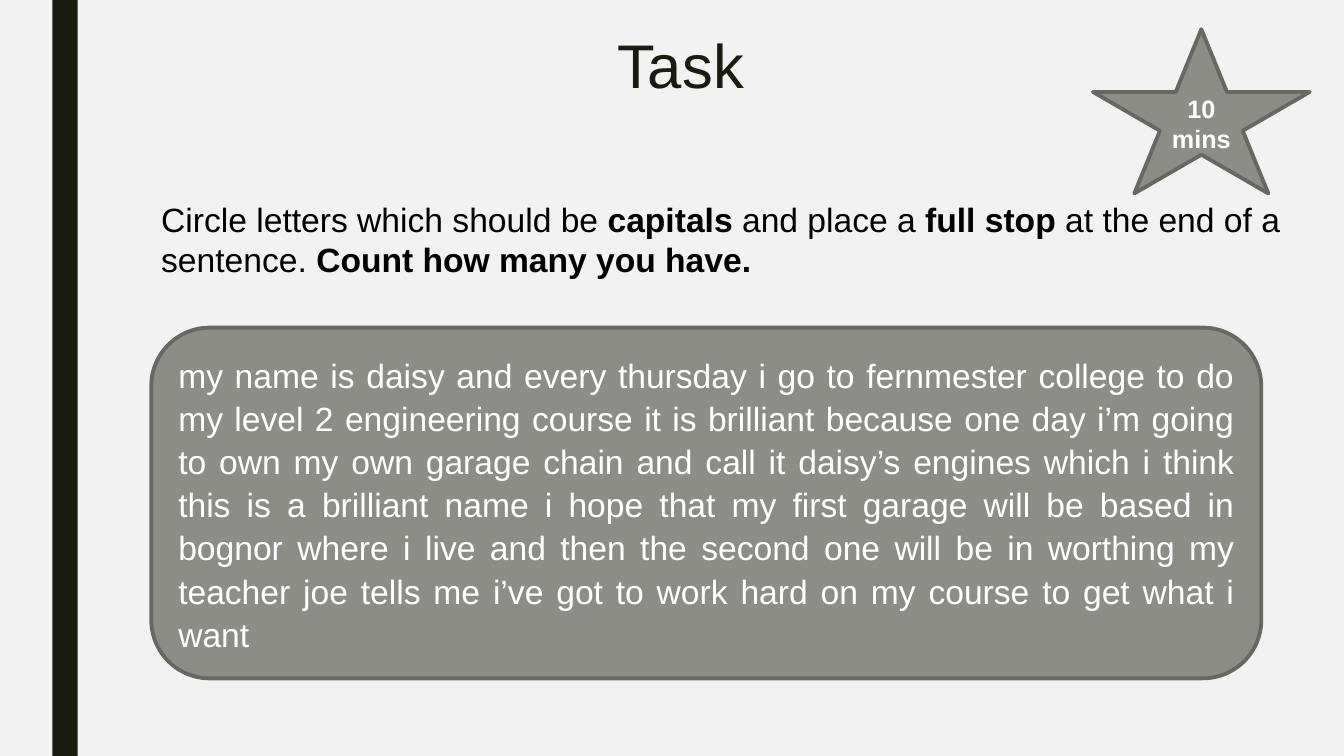
"""Builds the timed punctuation task slide."""
from pptx import Presentation
from pptx.dml.color import RGBColor
from pptx.enum.shapes import MSO_SHAPE
from pptx.enum.text import MSO_ANCHOR, PP_ALIGN
from pptx.util import Inches, Pt

RECT, STAR, ROUNDED = MSO_SHAPE.RECTANGLE, MSO_SHAPE.STAR_5_POINT, MSO_SHAPE.ROUNDED_RECTANGLE
LEFT, CENTER, JUSTIFY = PP_ALIGN.LEFT, PP_ALIGN.CENTER, PP_ALIGN.JUSTIFY
TOP, MIDDLE = MSO_ANCHOR.TOP, MSO_ANCHOR.MIDDLE
PAPER = RGBColor(0xF2, 0xF2, 0xF2)
DARK = RGBColor(0x19, 0x1B, 0x0E)
GREY = RGBColor(0x8C, 0x8D, 0x86)
OUTLINE = RGBColor(0x68, 0x68, 0x63)
WHITE = RGBColor(0xFF, 0xFF, 0xFF)
BLACK = RGBColor(0, 0, 0)

PASSAGE = (
    "my name is daisy and every thursday i go to fernmester college to do my level 2 "
    "engineering course it is brilliant because one day i’m going to own my own garage "
    "chain and call it daisy’s engines which i think this is a brilliant name i hope that "
    "my first garage will be based in bognor where i live and then the second one will be "
    "in worthing my teacher joe tells me i’ve got to work hard on my course to get what i want"
)


def write(s, runs, size=24, color=BLACK, align=LEFT, anchor=TOP, spacing=1.0, after=0):
    tf = s.text_frame
    tf.word_wrap = True
    tf.vertical_anchor = anchor
    p = tf.paragraphs[0]
    p.alignment = align
    p.line_spacing = spacing
    p.space_after = Pt(after)
    for text, bold in runs:
        r = p.add_run()
        r.text = text
        r.font.name = "Arial"
        r.font.size = Pt(size)
        r.font.bold = bold
        r.font.color.rgb = color


prs = Presentation()
prs.slide_width, prs.slide_height = Inches(13.33), Inches(7.5)
slide = prs.slides.add_slide(prs.slide_layouts[6])
slide.background.fill.solid()
slide.background.fill.fore_color.rgb = PAPER

bar = slide.shapes.add_shape(RECT, Inches(0.52), 0, Inches(0.25), prs.slide_height)
bar.shadow.inherit = False
bar.fill.solid()
bar.fill.fore_color.rgb = DARK
bar.line.fill.background()

title = slide.shapes.add_textbox(Inches(1.5), Inches(0.31), Inches(10.5), Inches(0.79))
write(title, [("Task", False)], size=44, color=DARK, align=CENTER, spacing=0.89)

instruction = slide.shapes.add_textbox(Inches(1.5), Inches(1.92), Inches(11.39), Inches(0.91))
write(instruction, [
    ("Circle letters which should be ", False),
    ("capitals ", True),
    ("and place a ", False),
    ("full stop ", True),
    ("at the end of a sentence. ", False),
    ("Count how many you have.", True),
])

panels = [
    (STAR, (10.84, 0.29, 2.15, 1.63), [("10 mins", True)], dict(size=18, align=CENTER)),
    (ROUNDED, (1.5, 3.25, 11.01, 3.48), [(PASSAGE, False)],
     dict(align=JUSTIFY, spacing=1.07, after=8)),
]
for shape, box, runs, style in panels:
    s = slide.shapes.add_shape(shape, *map(Inches, box))
    s.shadow.inherit = False
    s.fill.solid()
    s.fill.fore_color.rgb = GREY
    s.line.color.rgb = OUTLINE
    s.line.width = Pt(2.75)
    write(s, runs, color=WHITE, anchor=MIDDLE, **style)

prs.save("out.pptx")
